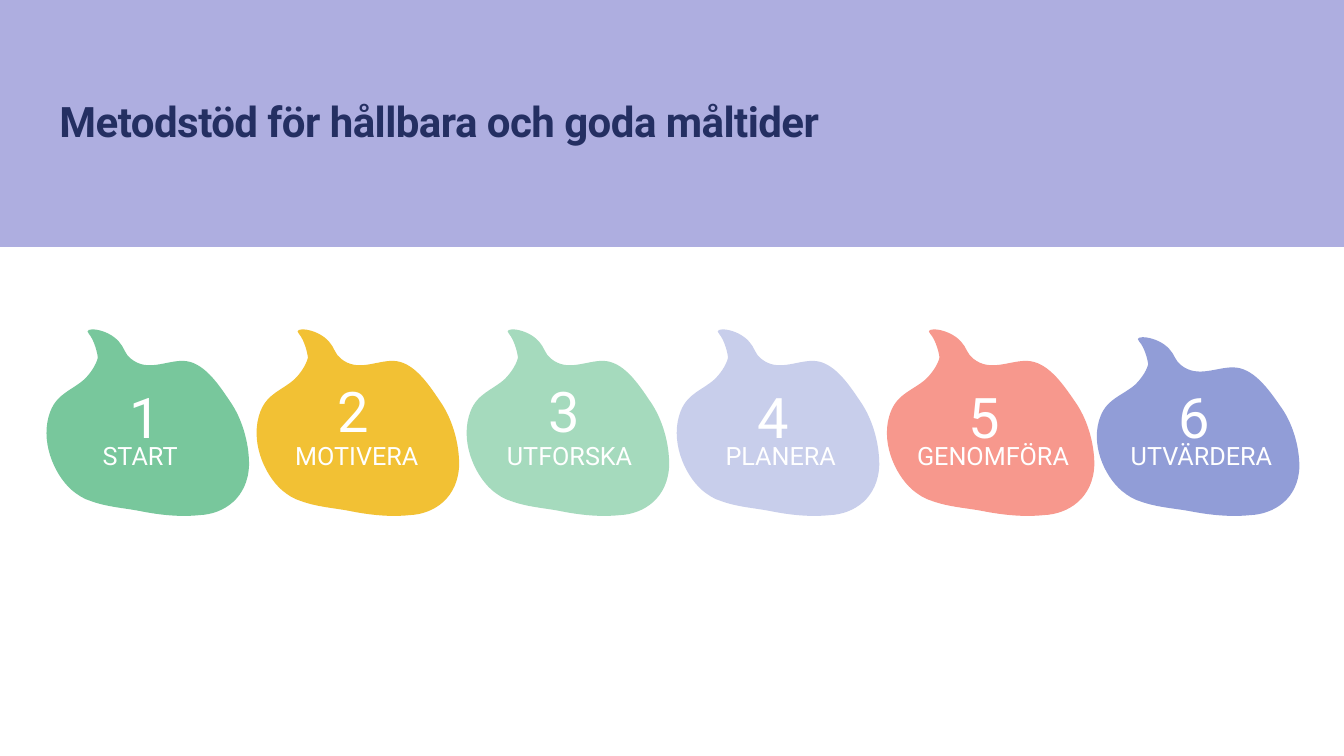
from lxml.etree import SubElement
from pptx import Presentation
from pptx.dml.color import RGBColor
from pptx.enum.shapes import MSO_SHAPE
from pptx.enum.text import MSO_ANCHOR, MSO_AUTO_SIZE, PP_ALIGN
from pptx.oxml.ns import qn
from pptx.util import Pt

NAVY = RGBColor(0x24, 0x2F, 0x62)
LAVENDER = RGBColor(0xAE, 0xAE, 0xE0)
WHITE = RGBColor(0xFF, 0xFF, 0xFF)
GREEN = RGBColor(0x78, 0xC7, 0x9C)
YELLOW = RGBColor(0xF2, 0xC1, 0x34)
MINT = RGBColor(0xA5, 0xDA, 0xBD)
PALE_BLUE = RGBColor(0xC8, 0xCE, 0xEB)
CORAL = RGBColor(0xF7, 0x98, 0x8D)
BLUE = RGBColor(0x91, 0x9D, 0xD7)

FONT = "Roboto"
HEADING = "Metodstöd för hållbara och goda måltider"

# number, label, colour, drop width, drop top, number left, number top, label left, label width
STEPS = [
    ("1", "START", GREEN, 149.8, 233.3, 85.7, 270, 66.2, 69.1),
    ("2", "MOTIVERA", YELLOW, 149.8, 233.3, 234.2, 265.7, 203.8, 105.1),
    ("3", "UTFORSKA", MINT, 149.8, 233.3, 384.5, 265.7, 355, 106.6),
    ("4", "PLANERA", PALE_BLUE, 149.8, 233.3, 534.2, 270, 511.2, 95.8),
    ("5", "GENOMFÖRA", CORAL, 153.4, 233.3, 684.7, 270, 648, 124.6),
    ("6", "UTVÄRDERA", BLUE, 149.8, 239, 834.5, 270, 800.6, 118.8),
]
DROP_LEFT, DROP_PITCH, DROP_BOTTOM = 28.1, 150.05, 369.4

DROP_START = (51, 173)
DROP_CURVES = [
    (67, 179), (85, 180), (100, 183),
    (120, 187), (140, 189), (159, 187),
    (183, 186), (207, 170), (208, 137),
    (208, 115), (201, 91), (189, 74),
    (177, 56), (162, 34), (142, 34),
    (125, 34), (107, 45), (91, 32),
    (85, 28), (84, 20), (79, 15),
    (67, 1), (42, 0), (49, 7),
    (55, 14), (58, 28), (58, 31),
    (56, 39), (50, 47), (45, 52),
    (33, 63), (18, 66), (11, 84),
    (0, 112), (14, 146), (32, 162),
    (38, 167), (44, 171), (51, 173),
]


def paint(shape, colour):
    shape.shadow.inherit = False
    shape.fill.solid()
    shape.fill.fore_color.rgb = colour
    shape.line.fill.background()


def add_run(paragraph, words, size, colour):
    run = paragraph.add_run()
    run.text = words
    run.font.name = FONT
    run.font.size = Pt(size)
    run.font.color.rgb = colour
    return run


def add_drop(slide, left, top, width, colour):
    builder = slide.shapes.build_freeform(*DROP_START, scale=Pt(0.72))
    builder.add_line_segments(DROP_CURVES, close=True)
    drop = builder.convert_to_shape()
    lines = list(drop.element.iter(qn("a:lnTo")))
    for first in range(0, len(lines), 3):
        for line in lines[first + 1:first + 3]:
            lines[first].append(line[0])
            line.getparent().remove(line)
        lines[first].tag = qn("a:cubicBezTo")
    drop.left, drop.top = Pt(left), Pt(top)
    drop.width, drop.height = Pt(width), Pt(DROP_BOTTOM - top)
    paint(drop, colour)


def add_text(slide, words, size, left, top, width, height, wrap):
    box = slide.shapes.add_textbox(Pt(left), Pt(top), Pt(width), Pt(height))
    box.text_frame.word_wrap = wrap
    box.text_frame.auto_size = MSO_AUTO_SIZE.SHAPE_TO_FIT_TEXT
    add_run(box.text_frame.paragraphs[0], words, size, WHITE)


def add_header(slide):
    header = slide.shapes.add_shape(MSO_SHAPE.RECTANGLE, 0, 0, Pt(960), Pt(176.4))
    paint(header, LAVENDER)
    frame = header.text_frame
    frame.word_wrap = True
    frame.vertical_anchor = MSO_ANCHOR.MIDDLE
    frame.margin_left = Pt(42.5)
    frame.margin_top = frame.margin_right = frame.margin_bottom = 0
    paragraph = frame.paragraphs[0]
    paragraph.alignment = PP_ALIGN.LEFT
    paragraph.line_spacing = 0.9
    heading = add_run(paragraph, HEADING, 30, NAVY)
    heading.font.bold = True
    heading.font._element.set("spc", "-40")


def main():
    deck = Presentation()
    deck.slide_width, deck.slide_height = Pt(960), Pt(540)
    slide = deck.slides.add_slide(deck.slide_layouts[6])
    add_header(slide)
    for index, step in enumerate(STEPS):
        number, label, colour, width, top, number_left, number_top, label_left, label_width = step
        add_drop(slide, DROP_LEFT + index * DROP_PITCH, top, width, colour)
        add_text(slide, number, 40, number_left, number_top, 41, 55.4, True)
        add_text(slide, label, 18, label_left, 311, label_width, 28.8, False)
    deck.save("out.pptx")


if __name__ == "__main__":
    main()
